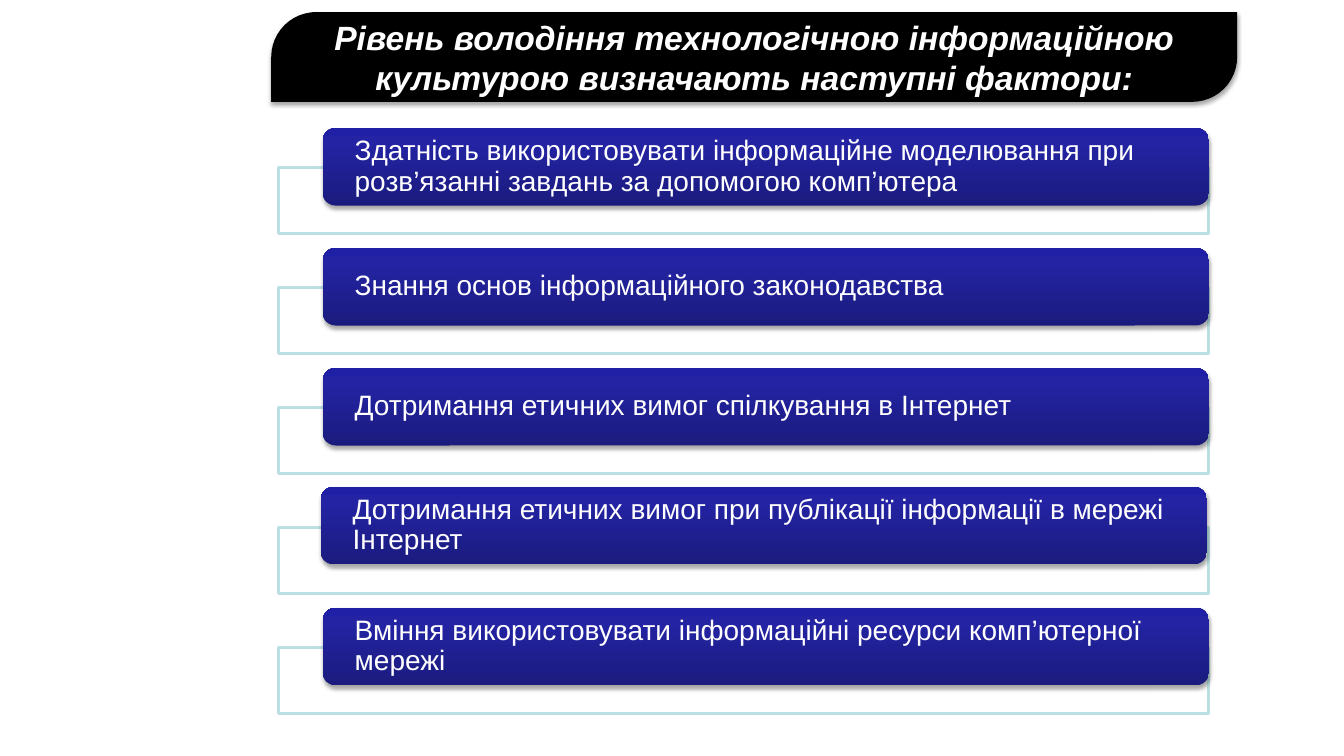
"""Build a slide listing the factors of technological information culture."""
from lxml import etree
from pptx import Presentation, util as u
from pptx.dml.color import RGBColor
from pptx.enum import shapes, text
from pptx.oxml.ns import qn

TITLE = "Рівень володіння технологічною інформаційною культурою визначають наступні фактори:"
FACTORS = [
    "Здатність використовувати інформаційне моделювання при розв’язанні завдань за допомогою комп’ютера",
    "Знання основ інформаційного законодавства",
    "Дотримання етичних вимог спілкування в Інтернет",
    "Дотримання етичних вимог при публікації інформації в мережі Інтернет",
    "Вміння використовувати інформаційні ресурси комп’ютерної мережі",
]
NUDGES = {3: (-0.02, -0.01)}
GRADIENT = [(0, "1B1B7E"), (80, "2323A3"), (100, "2020A6")]
FRAME_LEFT, FRAME_TOP, FRAME_WIDTH, FRAME_HEIGHT = 2.76, 1.66, 9.23, 0.66
BAR_LEFT, BAR_TOP, BAR_WIDTH, BAR_HEIGHT = 3.2, 1.27, 8.79, 0.77
ROW_STEP = 1.19


def color(value):
    return RGBColor.from_string(value)


def add_panel(slide, kind, left, top, width, height):
    shape = slide.shapes.add_shape(kind, *map(u.Inches, (left, top, width, height)))
    shape.shadow.inherit = False
    shape.line.fill.background()
    return shape


def add_child(parent, tag, **attributes):
    return etree.SubElement(parent, qn(tag), {name: str(value) for name, value in attributes.items()})


def add_color(parent, value):
    return add_child(parent, "a:srgbClr", val=value)


def add_shadow(shape):
    effects = shape._element.spPr.find(qn("a:effectLst"))
    shadow = add_child(effects, "a:outerShdw", blurRad=u.Pt(3.1), dist=u.Pt(1.8),
                       dir=90 * 60000, rotWithShape=0)
    add_child(add_color(shadow, "000000"), "a:alpha", val=35000)


def fill_gradient(shape):
    shape.fill.gradient()
    shape.fill.gradient_angle = 90
    stops = next(shape._element.spPr.iter(qn("a:gsLst")))
    for stop in list(stops):
        stops.remove(stop)
    for position, value in GRADIENT:
        add_color(add_child(stops, "a:gs", pos=position * 1000), value)


def write(shape, words, size, alignment):
    frame = shape.text_frame
    frame.word_wrap = True
    frame.vertical_anchor = text.MSO_ANCHOR.MIDDLE
    paragraph = frame.paragraphs[0]
    paragraph.text = words
    paragraph.alignment = alignment
    font = paragraph.font
    font.name, font.size = "Arial", u.Pt(size)
    font.color.rgb = color("FFFFFF")
    return paragraph


def add_title(slide):
    banner = add_panel(slide, shapes.MSO_SHAPE.ROUND_2_DIAG_RECTANGLE, 2.69, 0.12, 9.58, 0.89)
    banner.adjustments[0] = 0.5
    banner.fill.solid()
    banner.fill.fore_color.rgb = color("000000")
    add_shadow(banner)
    font = write(banner, TITLE, 24, text.PP_ALIGN.CENTER).font
    font.bold = font.italic = True


def add_factor(slide, row, words):
    offset = row * ROW_STEP
    frame = add_panel(slide, shapes.MSO_SHAPE.RECTANGLE,
                      FRAME_LEFT, FRAME_TOP + offset, FRAME_WIDTH, FRAME_HEIGHT)
    frame.fill.solid()
    frame.fill.fore_color.rgb = color("FFFFFF")
    add_child(next(frame._element.spPr.iter(qn("a:srgbClr"))), "a:alpha", val=90000)
    frame.line.color.rgb = color("BBE0E3")
    frame.line.width = u.Pt(2)

    right, down = NUDGES.get(row, (0, 0))
    bar = add_panel(slide, shapes.MSO_SHAPE.ROUNDED_RECTANGLE,
                    BAR_LEFT + right, BAR_TOP + offset + down, BAR_WIDTH, BAR_HEIGHT)
    fill_gradient(bar)
    add_shadow(bar)
    write(bar, words, 20, text.PP_ALIGN.LEFT).line_spacing = 0.9
    body = bar.text_frame
    body.margin_left = body.margin_right = u.Inches(0.28)
    body.margin_top = body.margin_bottom = 0


def main():
    presentation = Presentation()
    presentation.slide_width, presentation.slide_height = u.Inches(13.33), u.Inches(7.5)
    slide = presentation.slides.add_slide(presentation.slide_layouts[6])
    add_title(slide)
    for row, words in enumerate(FACTORS):
        add_factor(slide, row, words)
    presentation.save("out.pptx")


if __name__ == "__main__":
    main()
